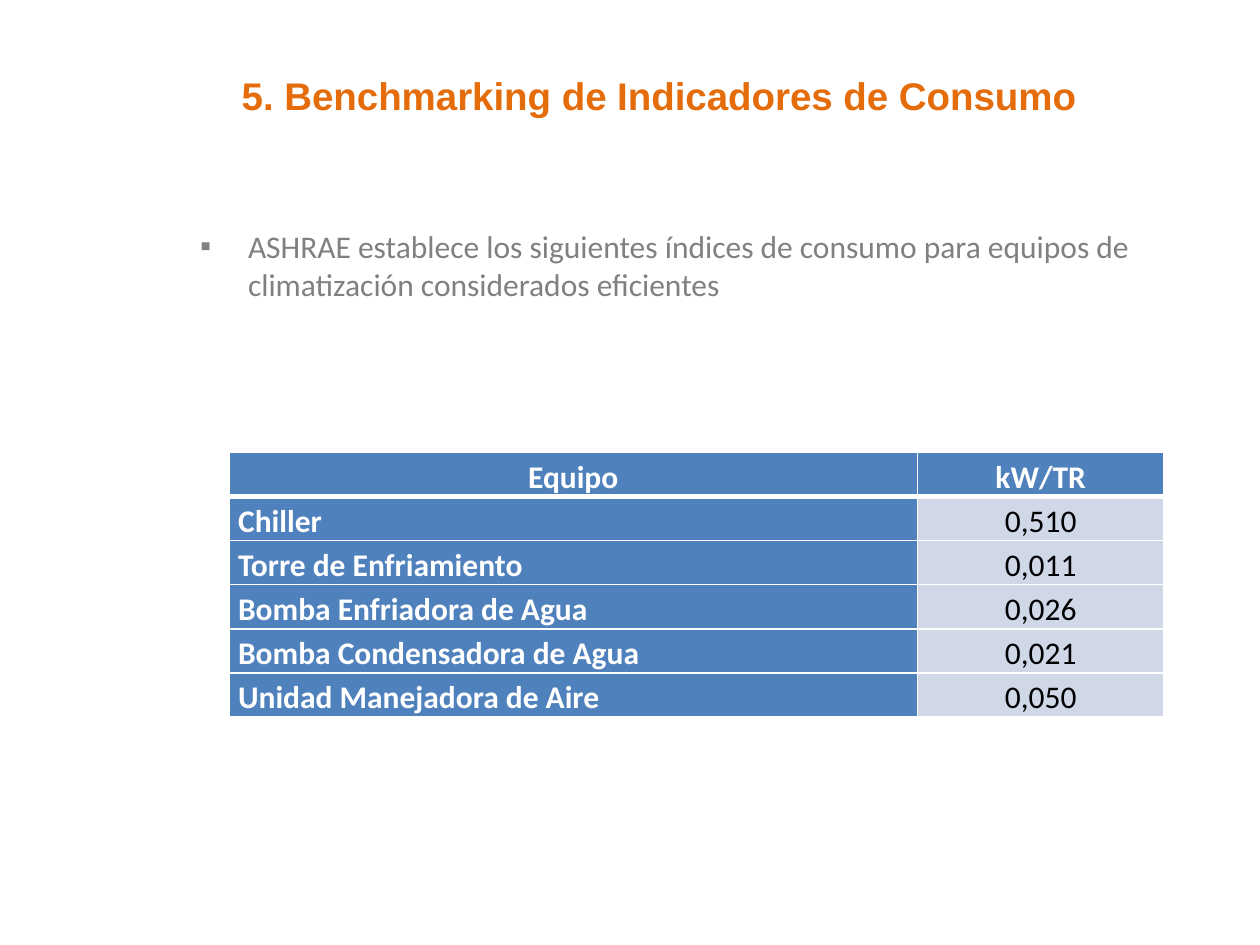
from lxml import etree
from pptx import Presentation
from pptx import util as u
from pptx.dml.color import RGBColor
from pptx.enum import text
from pptx.oxml import ns

ORANGE = RGBColor(0xE4, 0x6C, 0x0A)
GRAY = RGBColor(0x80, 0x80, 0x80)
BLUE = RGBColor(0x4F, 0x81, 0xBD)
PALE_BLUE = RGBColor(0xD0, 0xD8, 0xE8)
WHITE = RGBColor(0xFF, 0xFF, 0xFF)
BLACK = RGBColor(0x00, 0x00, 0x00)

TITLE_FORMAT = {"name": "Arial", "size": u.Pt(22), "bold": True}
BODY_FORMAT = {"name": "Calibri", "size": u.Pt(18), "bold": False}
LABEL_FORMAT = {"name": "Calibri", "size": u.Pt(18), "bold": True}

ROWS = [
    ("Equipo", "kW/TR"),
    ("Chiller", "0,510"),
    ("Torre de Enfriamiento", "0,011"),
    ("Bomba Enfriadora de Agua", "0,026"),
    ("Bomba Condensadora de Agua", "0,021"),
    ("Unidad Manejadora de Aire", "0,050"),
]


def write(paragraph, words, font_format, color):
    run = paragraph.add_run()
    run.text = words
    for name, value in font_format.items():
        setattr(run.font, name, value)
    run.font.color.rgb = color


def add_text_box(slide, box):
    shape = slide.shapes.add_textbox(*map(u.Inches, box))
    shape.text_frame.word_wrap = True
    return shape.text_frame.paragraphs[0]


def add_title(slide, box):
    write(add_text_box(slide, box),
          "5. Benchmarking de Indicadores de Consumo", TITLE_FORMAT, ORANGE)


def add_bullet(slide, box):
    paragraph = add_text_box(slide, box)
    properties = paragraph._p.get_or_add_pPr()
    indent = u.Inches(0.38)
    properties.set("marL", str(indent))
    properties.set("indent", str(-indent))
    etree.SubElement(properties, ns.qn("a:buFont"), typeface="Arial")
    etree.SubElement(properties, ns.qn("a:buChar"), char="▪")
    write(paragraph, "ASHRAE establece los siguientes índices de consumo para "
          "equipos de climatización considerados eficientes", BODY_FORMAT, GRAY)


def set_borders(cell, widths):
    properties = cell._tc.get_or_add_tcPr()
    for position, (side, width) in enumerate(widths.items()):
        line = etree.Element(ns.qn(f"a:ln{side}"), w=str(u.Pt(width)))
        fill = etree.SubElement(line, ns.qn("a:solidFill"))
        etree.SubElement(fill, ns.qn("a:srgbClr"), val=str(WHITE))
        properties.insert(position, line)


def add_consumption_table(slide, box, column_widths):
    frame = slide.shapes.add_table(len(ROWS), len(column_widths),
                                   *map(u.Inches, box))
    table = frame.table
    for column, width in zip(table.columns, column_widths):
        column.width = u.Inches(width)
    cell_format = {"margin_left": u.Inches(0.07), "margin_right": u.Inches(0.07),
                   "margin_top": 0, "margin_bottom": 0}
    for row_index, row in enumerate(ROWS):
        for column_index, words in enumerate(row):
            cell = table.cell(row_index, column_index)
            for name, value in cell_format.items():
                setattr(cell, name, value)
            is_header = row_index == 0
            is_value = column_index == 1 and not is_header
            cell.fill.solid()
            cell.fill.fore_color.rgb = PALE_BLUE if is_value else BLUE
            # A thicker rule parts the header from the rows below
            set_borders(cell, {"L": 1, "R": 1, "T": 3 if row_index == 1 else 1,
                               "B": 3 if is_header else 1})
            paragraph = cell.text_frame.paragraphs[0]
            paragraph.line_spacing = 1.15
            if is_header or is_value:
                paragraph.alignment = text.PP_ALIGN.CENTER
            write(paragraph, words, BODY_FORMAT if is_value else LABEL_FORMAT,
                  BLACK if is_value else WHITE)


def main():
    presentation = Presentation()
    presentation.slide_width = u.Inches(10)
    presentation.slide_height = u.Inches(7.5)
    slide = presentation.slides.add_slide(presentation.slide_layouts[6])
    # Body, table and title
    add_bullet(slide, (1.49, 1.75, 8.01, 4.95))
    add_consumption_table(slide, (1.82, 3.59, 7.42, 2.1), (5.46, 1.96))
    add_title(slide, (1.82, 0.52, 7.19, 0.45))
    presentation.save("out.pptx")


if __name__ == "__main__":
    main()
